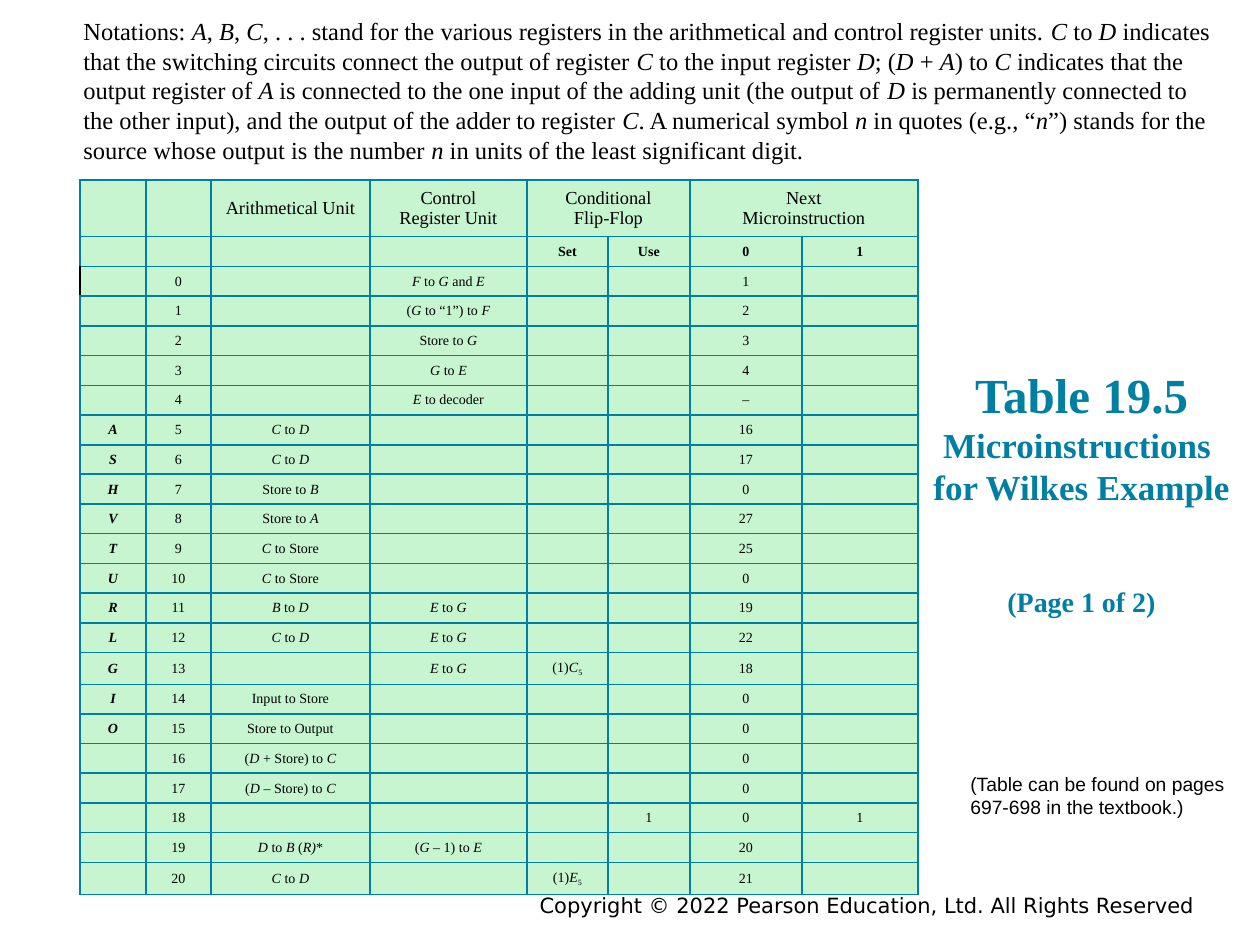
from itertools import product
from lxml import etree
from pptx import Presentation
from pptx import util as u
from pptx.dml.color import RGBColor
from pptx.enum import text
from pptx.oxml import ns

SCALE = 914400 / 126  # EMU per px
BLACK = RGBColor(0x00, 0x00, 0x00)
TEAL = RGBColor(0x00, 0x7F, 0xA3)
MINT = RGBColor(0xC6, 0xF5, 0xCF)
SERIF = "Times New Roman"
CENTER = text.PP_ALIGN.CENTER

# Underscores surround italics, a bar starts a subscript
NOTATIONS = [
    "Notations: _A_, _B_, _C_, . . . stand for the various registers in the "
    "arithmetical and control register units. _C _to _D _indicates",
    "that the switching circuits connect the output of register _C _to the "
    "input register _D_; (_D _+ _A_) to _C _indicates that the",
    "output register of _A _is connected to the one input of the adding unit "
    "(the output of _D _is permanently connected to",
    "the other input), and the output of the adder to register _C_. A "
    "numerical symbol _n _in quotes (e.g., “_n_”) stands for the",
    "source whose output is the number _n _in units of the least significant digit.",
]
COLUMN_WIDTHS = [66, 65, 159, 157, 81, 82, 112, 116]
HEADER = ["", "", "Arithmetical Unit", "Control\nRegister Unit",
          "Conditional\nFlip-Flop", "", "Next\nMicroinstruction", ""]
SUBHEADER = ["", "", "", "", "Set", "Use", "0", "1"]
# Order code, arithmetical unit, control register unit, set, use, next 0, next 1
MICROINSTRUCTIONS = [
    ("", "", "_F _to _G _and _E_", "", "", "1", ""),
    ("", "", "(_G _to “1”) to _F_", "", "", "2", ""),
    ("", "", "Store to _G_", "", "", "3", ""),
    ("", "", "_G _to _E_", "", "", "4", ""),
    ("", "", "_E _to decoder", "", "", "–", ""),
    ("_A_", "_C _to _D_", "", "", "", "16", ""),
    ("_S_", "_C _to _D_", "", "", "", "17", ""),
    ("_H_", "Store to _B_", "", "", "", "0", ""),
    ("_V_", "Store to _A_", "", "", "", "27", ""),
    ("_T_", "_C _to Store", "", "", "", "25", ""),
    ("_U_", "_C _to Store", "", "", "", "0", ""),
    ("_R_", "_B _to _D_", "_E _to _G_", "", "", "19", ""),
    ("_L_", "_C _to _D_", "_E _to _G_", "", "", "22", ""),
    ("_G_", "", "_E _to _G_", "(1)_C_|5", "", "18", ""),
    ("_I_", "Input to Store", "", "", "", "0", ""),
    ("_O_", "Store to Output", "", "", "", "0", ""),
    ("", "(_D _+ Store) to _C_", "", "", "", "0", ""),
    ("", "(_D _– Store) to _C_", "", "", "", "0", ""),
    ("", "", "", "", "1", "0", "1"),
    ("", "_D _to _B _(_R)_*", "(_G _– 1) to _E_", "", "", "20", ""),
    ("", "_C _to _D_", "", "(1)_E_|5", "", "21", ""),
]


def px(*lengths):
    return [u.Emu(round(length * SCALE)) for length in lengths]


def add_run(paragraph, words, size, font=SERIF, color=BLACK, bold=False, italic=False):
    run = paragraph.add_run()
    run.text = words
    run.font.size, run.font.name = u.Pt(size), font
    run.font.bold, run.font.italic = bold, italic
    run.font.color.rgb = color
    return run


def write_marked(paragraph, marked, size, **style):
    body, _, subscript = marked.partition("|")
    for index, words in enumerate(body.split("_")):
        if words:
            add_run(paragraph, words, size, italic=index % 2 == 1, **style)
    if subscript:
        run = add_run(paragraph, subscript, size, **style)
        run.font._element.set("baseline", "-25000")


def write_lines(frame, lines, size, align=None, spacing=None, **style):
    for index, line in enumerate(lines):
        paragraph = frame.add_paragraph() if index else frame.paragraphs[0]
        paragraph.alignment = align
        paragraph.line_spacing = spacing
        write_marked(paragraph, line, size, **style)


def add_text(slide, box, lines, size, wrap=False, **style):
    frame = slide.shapes.add_textbox(*px(*box)).text_frame
    frame.word_wrap = wrap
    write_lines(frame, lines, size, **style)


def set_title(slide):
    title = slide.shapes.title
    title.left, title.top, title.width, title.height = px(917, 236, 329, 465)
    frame = title.text_frame
    frame.auto_size = text.MSO_AUTO_SIZE.NONE
    frame.vertical_anchor = text.MSO_ANCHOR.BOTTOM
    frame.margin_left, frame.margin_right, frame.margin_bottom = px(12, 12, 83)
    # Words, size, line height, space before
    lines = [("Table 19.5", 28, 34, 0), ("Microinstructions ", 20, 24, 0),
             ("for Wilkes Example", 20, 24, 0), ("(Page 1 of 2)", 16, 19, 44)]
    for index, (words, size, height, before) in enumerate(lines):
        paragraph = frame.add_paragraph() if index else frame.paragraphs[0]
        paragraph.alignment = CENTER
        paragraph.line_spacing, paragraph.space_before = u.Pt(height), u.Pt(before)
        add_run(paragraph, words, size, color=TEAL, bold=True)


def set_borders(cell, left=TEAL):
    properties = cell._tc.get_or_add_tcPr()
    sides = {"lnL": left, "lnR": TEAL, "lnT": TEAL, "lnB": TEAL}
    for index, (side, color) in enumerate(sides.items()):
        line = etree.Element(ns.qn(f"a:{side}"), w=str(u.Pt(1)))
        fill = etree.SubElement(line, ns.qn("a:solidFill"))
        etree.SubElement(fill, ns.qn("a:srgbClr"), val=str(color))
        properties.insert(index, line)


def fill_cell(cell, marked, size, bold, left):
    cell.fill.solid()
    cell.fill.fore_color.rgb = MINT
    cell.vertical_anchor = text.MSO_ANCHOR.MIDDLE
    set_borders(cell, left)
    if marked:
        write_lines(cell.text_frame, marked.split("\n"), size, align=CENTER, bold=bold)
    else:
        # Keeps an empty cell from stretching its row
        paragraph = cell.text_frame.paragraphs[0]._p
        etree.SubElement(paragraph, ns.qn("a:endParaRPr"), sz=str(size * 100))


def row_height(index, row):
    if index == 0:
        return 56
    if any("|" in marked for marked in row):
        return 32
    return 29 + index % 2


def add_microinstruction_table(slide):
    rows = [HEADER, SUBHEADER]
    rows += [[code, str(address), *rest]
             for address, (code, *rest) in enumerate(MICROINSTRUCTIONS)]
    heights = [row_height(index, row) for index, row in enumerate(rows)]
    box = px(80, 180, sum(COLUMN_WIDTHS), sum(heights))
    table = slide.shapes.add_table(len(rows), len(COLUMN_WIDTHS), *box).table
    table.first_row = table.horz_banding = False
    for column, width in zip(table.columns, px(*COLUMN_WIDTHS)):
        column.width = width
    for row, height in zip(table.rows, px(*heights)):
        row.height = height
    for r, c in product(range(len(rows)), range(len(COLUMN_WIDTHS))):
        size = 8 if r or not rows[r][c] else 10.5
        bold = r == 1 or (r > 1 and c == 0)
        left = BLACK if (r, c) == (2, 0) else TEAL
        fill_cell(table.cell(r, c), rows[r][c], size, bold, left)
    for c in (4, 6):
        table.cell(0, c).merge(table.cell(0, c + 1))


def main():
    presentation = Presentation()
    presentation.slide_width, presentation.slide_height = px(1260, 945)
    slide = presentation.slides.add_slide(presentation.slide_layouts[5])

    # Footer line
    add_text(slide, (220, 886, 987, 28),
             ["Copyright © 2022 Pearson Education, Ltd. All Rights Reserved"],
             12, wrap=True, align=text.PP_ALIGN.RIGHT, font="DejaVu Sans")
    # Notations above the table
    add_text(slide, (71, 10, 1160, 161), NOTATIONS, 14, spacing=u.Pt(16.9))
    add_microinstruction_table(slide)
    # Textbook reference and title on the right
    add_text(slide, (958, 766, 289, 59),
             ["(Table can be found on pages ", "697-698 in the textbook.)"],
             11, font="Arial")
    set_title(slide)

    presentation.save("out.pptx")


if __name__ == "__main__":
    main()
